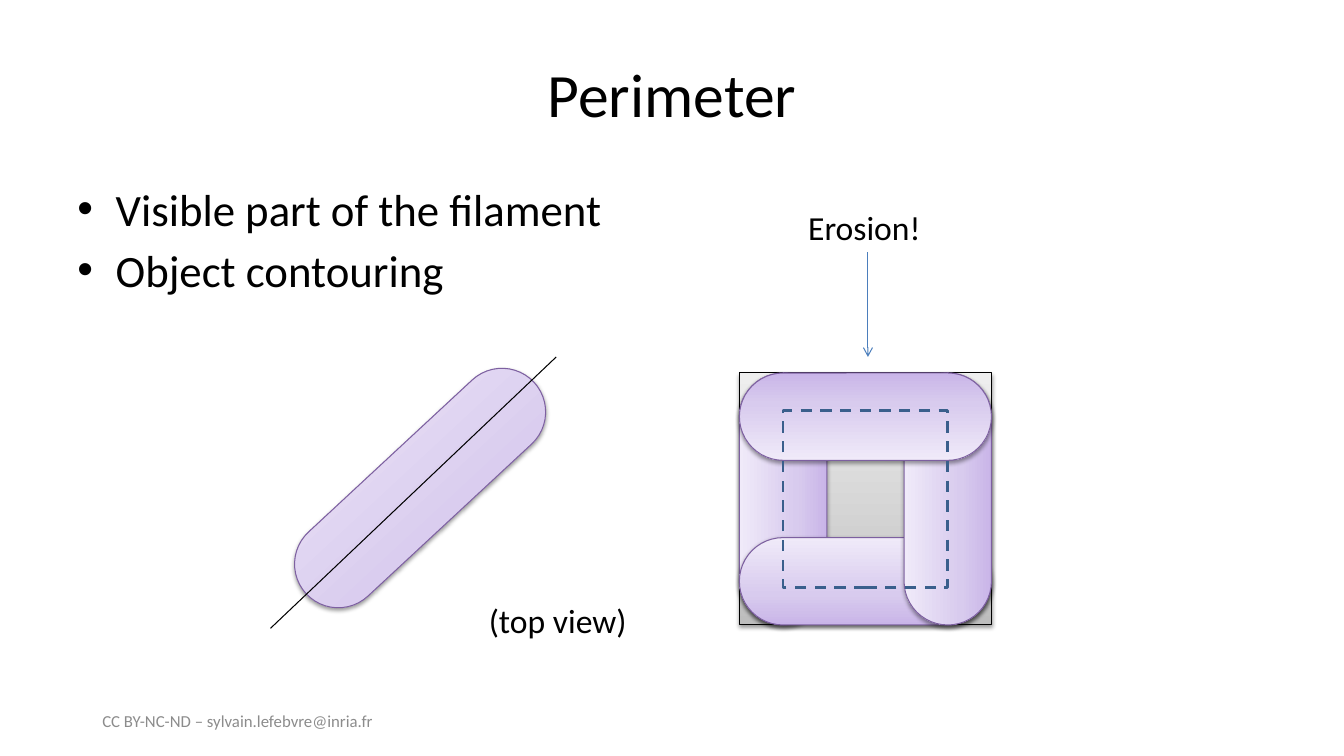
from lxml import etree
from pptx import Presentation
from pptx.dml.color import RGBColor
from pptx.enum.dml import MSO_LINE
from pptx.enum.shapes import MSO_CONNECTOR, MSO_SHAPE
from pptx.enum.text import MSO_ANCHOR, MSO_AUTO_SIZE, PP_ALIGN
from pptx.oxml.ns import qn
from pptx.util import Inches, Pt

RECT, PILL = MSO_SHAPE.RECTANGLE, MSO_SHAPE.ROUNDED_RECTANGLE
STRAIGHT, DASH = MSO_CONNECTOR.STRAIGHT, MSO_LINE.DASH
LEFT, CENTER = PP_ALIGN.LEFT, PP_ALIGN.CENTER
TOP, MIDDLE = MSO_ANCHOR.TOP, MSO_ANCHOR.MIDDLE
NO_FIT = MSO_AUTO_SIZE.NONE

BLACK = RGBColor(0x00, 0x00, 0x00)
GREY = RGBColor(0x8C, 0x8C, 0x8C)
PURPLE = RGBColor(0x7D, 0x60, 0xA0)
BLUE = RGBColor(0x4B, 0x7E, 0xBC)
NAVY = RGBColor(0x3A, 0x5F, 0x8C)
LILAC = [(0, RGBColor(0xC9, 0xB5, 0xE8)), (35, RGBColor(0xD8, 0xCB, 0xEE)),
         (100, RGBColor(0xF0, 0xEA, 0xF9))]
SILVER = [(0, RGBColor(0xBD, 0xBD, 0xBD)), (35, RGBColor(0xD1, 0xD1, 0xD1)),
          (100, RGBColor(0xEE, 0xEE, 0xEE))]

# The slide is a grid of 16 columns by 9 rows of square cells
WIDTH, HEIGHT = Inches(13.33), Inches(7.5)
CELL = HEIGHT / 9
THICK = 1.04          # width of a filament
SIDE = 3              # side of the printed square
MID_X, MID_Y = 10.3, 5.94


def cells(*sizes):
    return [round(size * CELL) for size in sizes]


def add(parent, tag, **attrs):
    return etree.SubElement(parent, qn(tag), attrs)


def place(shape, *box):
    names = ("left", "top", "width", "height")
    for name, size in zip(names, cells(*box)):
        setattr(shape, name, size)


def style(par, size, color=BLACK, align=LEFT):
    par.alignment = align
    for name, value in {"name": "Calibri", "size": Pt(size)}.items():
        setattr(par.font, name, value)
    par.font.color.rgb = color


def frame(shape, anchor, wrap):
    text = shape.text_frame
    form = {"auto_size": NO_FIT, "word_wrap": wrap, "vertical_anchor": anchor}
    for name, value in form.items():
        setattr(text, name, value)
    return text


def title(slide, words):
    head = slide.shapes.title
    place(head, 0.8, 0.36, 14.4, 1.5)
    text = frame(head, MIDDLE, True)
    text.text = words
    style(text.paragraphs[0], 44, align=CENTER)


def bullets(slide, items):
    body = slide.placeholders[1]
    place(body, 0.8, 2.1, 14.4, 5.94)
    text = frame(body, TOP, True)
    text.text = "\n".join(items)
    for row, par in enumerate(text.paragraphs):
        props = par._p.get_or_add_pPr()
        props.set("marL", str(Inches(0.38)))
        props.set("indent", str(-Inches(0.38)))
        par.space_before = Pt(5 if row else 0)
        add(props, "a:buFont", typeface="Arial")
        add(props, "a:buChar", char="•")
        style(par, 32)


def label(slide, words, box, size=24, color=BLACK, anchor=TOP):
    text = frame(slide.shapes.add_textbox(*cells(*box)), anchor, False)
    text.text = words
    style(text.paragraphs[0], size, color)


def block(slide, kind, mid, size, color, width=0.75, stops=None, turn=0):
    """Draw a shape around its centre, shaded and shadowed if it has stops."""
    (x, y), (w, h) = mid, size
    shape = slide.shapes.add_shape(kind, *cells(x - w / 2, y - h / 2, w, h))
    shape.rotation = turn
    shape.line.color.rgb = color
    shape.line.width = Pt(width)
    shape.shadow.inherit = False
    if stops:
        shade(shape, stops)
    else:
        shape.fill.background()
    return shape


def shade(shape, stops):
    shape.fill.gradient()
    shape.fill.gradient_angle = 90
    props = shape._element.spPr
    ramp = props.find(".//" + qn("a:gsLst"))
    for old in list(ramp):
        ramp.remove(old)
    for at, color in stops:
        add(add(ramp, "a:gs", pos=str(at * 1000)), "a:srgbClr", val=str(color))
    cast = add(props.find(qn("a:effectLst")), "a:outerShdw",
               blurRad=str(Pt(3.1)), dist=str(Pt(1.6)), dir="5400000",
               rotWithShape="0")
    add(add(cast, "a:srgbClr", val=str(BLACK)), "a:alpha", val="38000")


def pill(slide, mid, length=SIDE, turn=0):
    bar = block(slide, PILL, mid, (length, THICK), PURPLE,
                stops=LILAC, turn=turn)
    bar.adjustments[0] = 0.5


def line(slide, start, end, color, arrow=False):
    link = slide.shapes.add_connector(STRAIGHT, *cells(*start, *end))
    link.line.color.rgb = color
    link.line.width = Pt(0.75)
    if arrow:
        add(link.line._get_or_add_ln(), "a:tailEnd", type="arrow")
    add(link._element.spPr, "a:effectLst")


def main():
    deck = Presentation()
    deck.slide_width, deck.slide_height = WIDTH, HEIGHT
    slide = deck.slides.add_slide(deck.slide_layouts[1])

    # Heading and list
    title(slide, "Perimeter")
    bullets(slide, ["Visible part of the filament", "Object contouring"])

    # Target square, below the filaments
    block(slide, RECT, (MID_X, MID_Y), (SIDE, SIDE), BLACK, stops=SILVER)

    # Single filament with its axis
    pill(slide, (5, 5.81), 3.7, 317.1)
    line(slide, (3.22, 7.48), (6.62, 4.25), BLACK)

    # Four filaments inside the square: left, bottom, right, top
    gap = (SIDE - THICK) / 2
    for dx, dy, turn in [(-1, 0, 270), (0, 1, 0), (1, 0, 270), (0, -1, 180)]:
        pill(slide, (MID_X + dx * gap, MID_Y + dy * gap), turn=turn)

    # Eroded corner and contour path
    line(slide, (10.33, 3), (10.33, 4.25), BLUE, arrow=True)
    label(slide, "Erosion!", (9.5, 2.4, 1.6, 0.6))
    path = block(slide, RECT, (MID_X, MID_Y), (2 * gap, 2.1), NAVY, 2)
    path.line.dash_style = DASH

    # Captions
    label(slide, "(top view)", (5.7, 7.08, 1.9, 0.6))
    label(slide, "CC BY-NC-ND – sylvain.lefebvre@inria.fr",
          (1.1, 8.34, 3.6, 0.48), 12, GREY, MIDDLE)

    deck.save("out.pptx")


if __name__ == "__main__":
    main()
